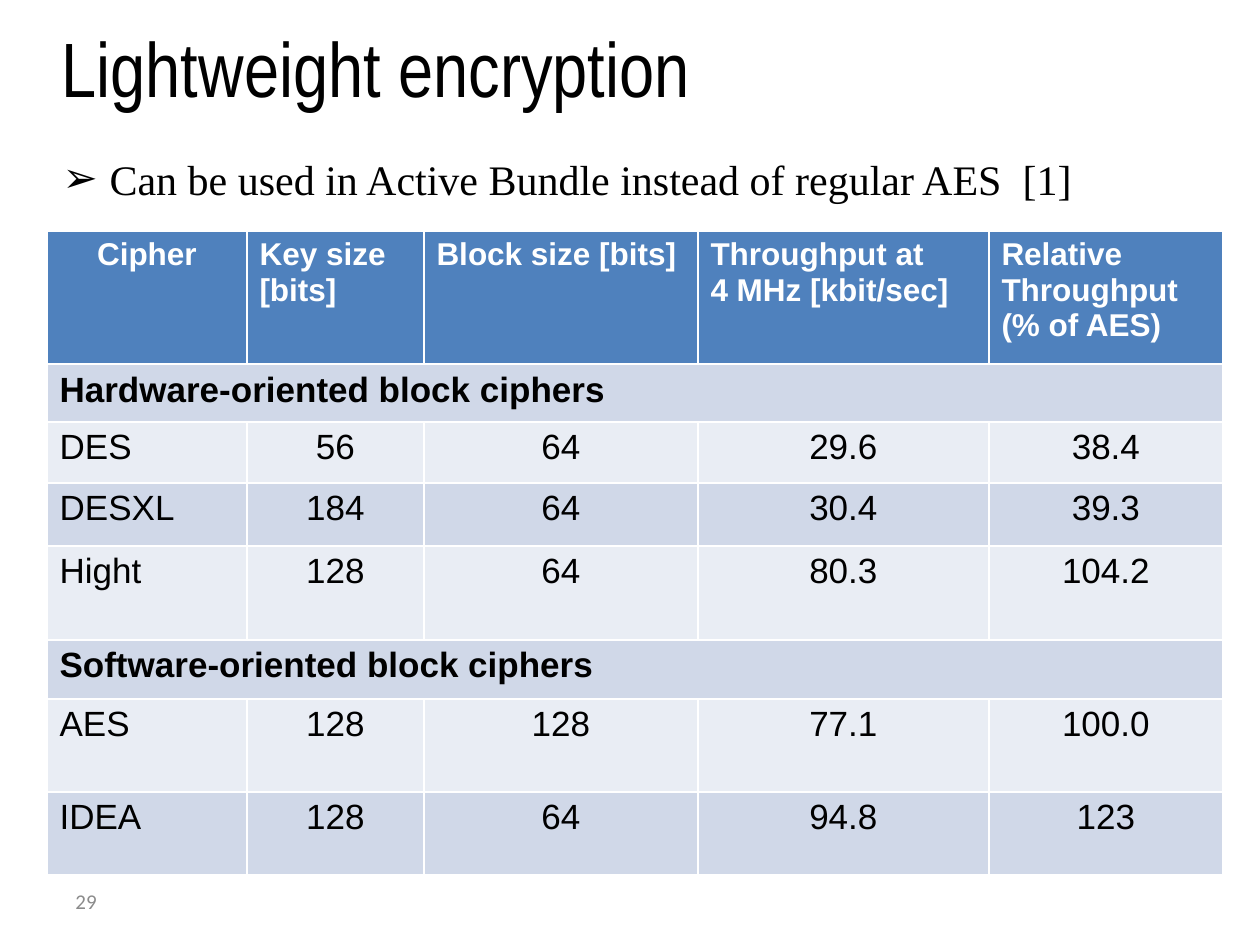
import pptx
import pptx.dml.color
import pptx.enum.text
import pptx.oxml
import pptx.oxml.ns
import pptx.util

PIXELS_PER_INCH = 126
COLORS = {
    "text": "000000",
    "header_text": "FFFFFF",
    "number": "8B8B8B",
    "header": "4F81BD",
    "dark_band": "D0D8E8",
    "light_band": "E9EDF4",
}
ALIGN = pptx.enum.text.PP_ALIGN
ANCHOR = pptx.enum.text.MSO_ANCHOR

COLUMN_WIDTHS = [200, 177, 274, 291, 234]
ROW_HEIGHTS = [133, 58, 61, 63, 94, 59, 93, 83]
# A row with a single entry is a section heading across all columns.
CIPHER_ROWS = [
    ["Cipher", "Key size [bits]", "Block size [bits]",
     "Throughput at\v4 MHz [kbit/sec]", "Relative Throughput (% of AES)"],
    ["Hardware-oriented block ciphers"],
    ["DES", "56", "64", "29.6", "38.4"],
    ["DESXL", "184", "64", "30.4", "39.3"],
    ["Hight", "128", "64", "80.3", "104.2"],
    ["Software-oriented block ciphers"],
    ["AES", "128", "128", "77.1", "100.0"],
    ["IDEA", "128", "64", "94.8", "123"],
]


def px(length):
    return pptx.util.Emu(round(length * 914400 / PIXELS_PER_INCH))


def rgb(name):
    return pptx.dml.color.RGBColor.from_string(COLORS[name])


def write_text(frame, text, *, size, font="Arial", color="text", bold=False,
               align=ALIGN.LEFT, anchor=ANCHOR.TOP):
    """Fill a text frame or table cell and return its paragraph."""
    frame.vertical_anchor = anchor
    text_frame = getattr(frame, "text_frame", frame)
    text_frame.word_wrap = True
    paragraph = text_frame.paragraphs[0]
    paragraph.text = text
    paragraph.alignment = align
    paragraph.space_before = pptx.util.Pt(0)
    for run in paragraph.runs:
        run.font.name = font
        run.font.size = pptx.util.Pt(size)
        run.font.bold = bold
        run.font.color.rgb = rgb(color)
    return paragraph


def place(shape, left, top, width, height):
    shape.left, shape.top = px(left), px(top)
    shape.width, shape.height = px(width), px(height)
    shape.text_frame.auto_size = pptx.enum.text.MSO_AUTO_SIZE.NONE


def add_bullet(paragraph, character, margin, indent):
    properties = paragraph._p.get_or_add_pPr()
    properties.set("marL", str(px(margin)))
    properties.set("indent", str(px(indent)))
    bullet = pptx.oxml.parse_xml(
        f'<a:buChar {pptx.oxml.ns.nsdecls("a")} char="{character}"/>')
    properties.append(bullet)


def add_title(slide, text):
    title = slide.shapes.title
    place(title, 49, 14, 1134, 101)
    write_text(title.text_frame, text, size=44, font="Arial Narrow")


def add_body(slide, text):
    body = slide.placeholders[1]
    place(body, 49, 103, 1110, 417)
    body.text_frame.margin_top = px(50)
    paragraph = write_text(body.text_frame, text, size=24,
                           font="Times New Roman", align=ALIGN.JUSTIFY)
    add_bullet(paragraph, "➢", 48, -47)


def add_slide_number(slide, number):
    box = slide.shapes.add_textbox(0, 0, 0, 0)
    place(box, 63, 876, 294, 50)
    write_text(box.text_frame, number, size=12, font="Calibri",
               color="number", anchor=ANCHOR.MIDDLE)


def cell_format(row, column, is_section):
    if row == 0:
        return {"size": 18, "bold": True, "color": "header_text",
                "align": ALIGN.LEFT if column else ALIGN.CENTER}
    return {"size": 20, "bold": is_section,
            "align": ALIGN.CENTER if column else ALIGN.LEFT}


def add_cipher_table(slide, left, top):
    table = slide.shapes.add_table(
        len(CIPHER_ROWS), len(COLUMN_WIDTHS), px(left), px(top),
        px(sum(COLUMN_WIDTHS)), px(sum(ROW_HEIGHTS))).table
    for column, width in zip(table.columns, COLUMN_WIDTHS):
        column.width = px(width)
    for row, height in zip(table.rows, ROW_HEIGHTS):
        row.height = px(height)

    last_column = len(COLUMN_WIDTHS) - 1
    for row, texts in enumerate(CIPHER_ROWS):
        is_section = len(texts) == 1
        band = "dark_band" if row % 2 else "light_band"
        for cell in table.rows[row].cells:
            cell.fill.solid()
            cell.fill.fore_color.rgb = rgb(band if row else "header")
        if is_section:
            table.cell(row, 0).merge(table.cell(row, last_column))
        for column, text in enumerate(texts):
            write_text(table.cell(row, column), text,
                       **cell_format(row, column, is_section))


def main():
    presentation = pptx.Presentation()
    presentation.slide_width = px(1260)
    presentation.slide_height = px(945)
    slide = presentation.slides.add_slide(presentation.slide_layouts[1])
    add_title(slide, "Lightweight encryption")
    add_slide_number(slide, "29")
    add_body(slide, "Can be used in Active Bundle instead of regular AES  [1]")
    add_cipher_table(slide, 47, 231)
    presentation.save("out.pptx")


if __name__ == "__main__":
    main()
